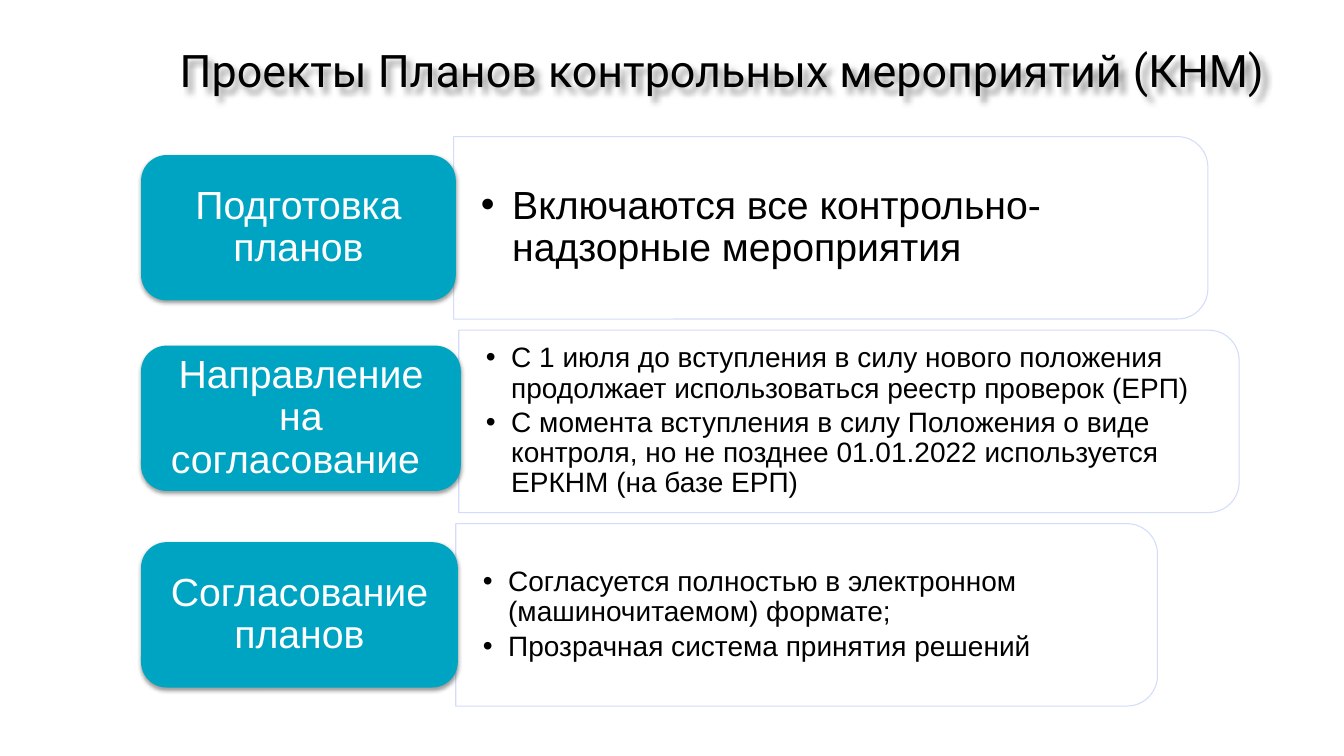
from lxml.etree import SubElement
from pptx import Presentation
from pptx.dml.color import RGBColor
from pptx.enum.shapes import MSO_SHAPE
from pptx.enum.text import MSO_ANCHOR, MSO_AUTO_SIZE, PP_ALIGN
from pptx.oxml.ns import qn
from pptx.util import Emu, Pt

PIXEL = 9144  # one px is a hundredth of an inch
WHITE = RGBColor(0xFF, 0xFF, 0xFF)
BLACK = RGBColor(0x00, 0x00, 0x00)
TEAL = RGBColor(0x00, 0xA4, 0xC3)
TEAL_LINE = RGBColor(0x00, 0xA5, 0xC2)
PANEL_LINE = RGBColor(0xCF, 0xD9, 0xFB)

LABEL_LEFT, LABEL_HEIGHT = 142, 140
PANEL_HEIGHT, PANEL_TEXT_HEIGHT, PANEL_TEXT_MARGIN = 181, 163, 9
FIRST_CENTER, ROW_PITCH = 226, 192

ROWS = [
    {"label": "Подготовка планов", "label_width": 308, "label_shift": 0,
     "panel_width": 748, "size": 28, "indent": 31,
     "points": ["Включаются все контрольно-надзорные мероприятия"]},
    {"label": "Направление на согласование ", "label_width": 313, "label_shift": -3,
     "panel_width": 774, "size": 20, "indent": 25,
     "points": ["С 1 июля до вступления в силу нового положения продолжает "
                "использоваться реестр проверок (ЕРП)",
                "С момента вступления в силу Положения о виде контроля, но не "
                "позднее 01.01.2022 используется ЕРКНМ (на базе ЕРП)"]},
    {"label": "Согласование планов", "label_width": 310, "label_shift": 0,
     "panel_width": 696, "size": 20, "indent": 25,
     "points": ["Согласуется полностью в электронном (машиночитаемом) формате;",
                "Прозрачная система принятия решений"]},
]


def px(value):
    return Emu(round(value * PIXEL))


def box(left, top, width, height):
    return px(left), px(top), px(width), px(height)


def set_attributes(target, values):
    for name, value in values.items():
        setattr(target, name, value)


def format_frame(frame, horizontal, vertical):
    set_attributes(frame, {
        "word_wrap": True, "auto_size": MSO_AUTO_SIZE.NONE,
        "vertical_anchor": MSO_ANCHOR.MIDDLE,
        "margin_left": px(horizontal), "margin_right": px(horizontal),
        "margin_top": px(vertical), "margin_bottom": px(vertical)})


def write(paragraph, text, size, color, font="Arial", **layout):
    run = paragraph.add_run()
    run.text = text
    set_attributes(run.font, {"name": font, "size": Pt(size), "bold": False})
    run.font.color.rgb = color
    set_attributes(paragraph, layout)


def style_shape(shape, fill, line, line_width):
    shape.shadow.inherit = False
    shape.fill.solid()
    shape.fill.fore_color.rgb = fill
    shape.line.color.rgb = line
    shape.line.width = Pt(line_width)


def add_shadow(shape, blur, distance, degrees, opacity):
    shape.shadow.inherit = False
    effects = shape._element.spPr.find(qn("a:effectLst"))
    shadow = SubElement(effects, qn("a:outerShdw"), {
        "blurRad": str(Pt(blur)), "dist": str(Pt(distance)),
        "dir": str(degrees * 60000), "algn": "ctr", "rotWithShape": "0"})
    color = SubElement(shadow, qn("a:srgbClr"), val=str(BLACK))
    SubElement(color, qn("a:alpha"), val=str(opacity * 1000))


def add_bullet(paragraph, indent):
    properties = paragraph._p.get_or_add_pPr()
    properties.set("marL", str(px(indent)))
    properties.set("indent", str(-px(indent)))
    SubElement(properties, qn("a:buFont"), typeface="Arial")
    SubElement(properties, qn("a:buChar"), char="•")


def add_title(slide, left, top, width, height):
    title = slide.shapes.title
    title.left, title.top, title.width, title.height = box(left, top, width, height)
    format_frame(title.text_frame, 3, 3)
    write(title.text_frame.paragraphs[0], "Проекты Планов контрольных мероприятий (КНМ)",
          32, BLACK, "Roboto", alignment=PP_ALIGN.CENTER, line_spacing=0.8,
          space_before=Pt(21))
    add_shadow(title, 4, 4, 45, 40)


def add_panel(slide, left, center, width, row):
    # Outline: a quarter turn puts the rounded corners on the right
    middle = left + width / 2
    outline = slide.shapes.add_shape(
        MSO_SHAPE.ROUND_2_SAME_RECTANGLE,
        *box(middle - PANEL_HEIGHT / 2, center - width / 2, PANEL_HEIGHT, width))
    outline.rotation = 90
    style_shape(outline, WHITE, PANEL_LINE, 0.75)
    line_color = outline.line._ln.find(".//" + qn("a:srgbClr"))
    SubElement(line_color, qn("a:alpha"), val="90000")

    # Bulleted text
    text_box = slide.shapes.add_textbox(*box(
        left, center - PANEL_TEXT_HEIGHT / 2, width - PANEL_TEXT_MARGIN, PANEL_TEXT_HEIGHT))
    frame = text_box.text_frame
    format_frame(frame, 27, 14)
    for index, point in enumerate(row["points"]):
        paragraph = frame.add_paragraph() if index else frame.paragraphs[0]
        write(paragraph, point, row["size"], BLACK, level=1, line_spacing=0.9,
              space_after=Pt(row["size"] * 0.15), alignment=PP_ALIGN.LEFT)
        add_bullet(paragraph, row["indent"])


def add_label(slide, left, center, width, text):
    label = slide.shapes.add_shape(
        MSO_SHAPE.ROUNDED_RECTANGLE,
        *box(left, center - LABEL_HEIGHT / 2, width, LABEL_HEIGHT))
    style_shape(label, TEAL, TEAL_LINE, 3)
    add_shadow(label, 3.1, 1.6, 90, 38)
    format_frame(label.text_frame, 12, 6)
    write(label.text_frame.paragraphs[0], text, 28, WHITE,
          alignment=PP_ALIGN.CENTER, line_spacing=0.9)


def add_row(slide, center, row):
    panel_left = LABEL_LEFT + row["label_width"]
    add_panel(slide, panel_left, center, row["panel_width"], row)
    add_label(slide, LABEL_LEFT, center + row["label_shift"], row["label_width"], row["label"])


def main():
    presentation = Presentation()
    presentation.slide_width, presentation.slide_height = px(1333), px(750)
    slide = presentation.slides.add_slide(presentation.slide_layouts[5])
    add_title(slide, 43, 9, 1347, 131)
    for index, row in enumerate(ROWS):
        add_row(slide, FIRST_CENTER + index * ROW_PITCH, row)
    presentation.save("out.pptx")


if __name__ == "__main__":
    main()
